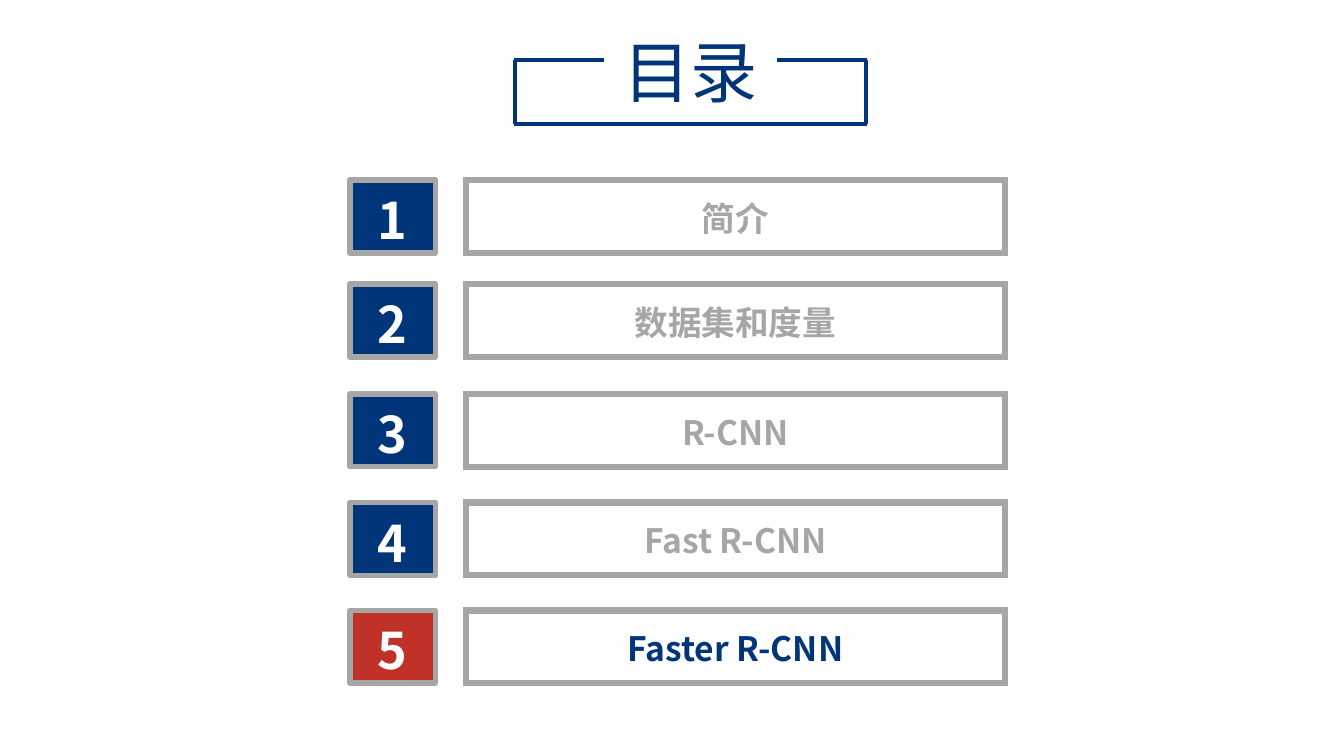
from pptx import Presentation
from pptx.dml.color import RGBColor
from pptx.enum.shapes import MSO_CONNECTOR, MSO_SHAPE
from pptx.enum.text import MSO_ANCHOR, PP_ALIGN
from pptx.oxml.ns import qn
from pptx.util import Pt
from lxml import etree

RECT = MSO_SHAPE.RECTANGLE
STRAIGHT = MSO_CONNECTOR.STRAIGHT
MIDDLE = MSO_ANCHOR.MIDDLE
CENTER = PP_ALIGN.CENTER

FONT = "Noto Sans CJK SC"
COLORS = {"navy": "003679", "red": "C03228", "gray": "A6A6A6", "white": "FFFFFF"}


def rgb(name):
    return RGBColor.from_string(COLORS[name])


def write(sp, text, size, color, bold=False, spacing=None):
    """Put one centred line of text into a shape."""
    tf = sp.text_frame
    tf.word_wrap = True
    tf.vertical_anchor = MIDDLE
    p = tf.paragraphs[0]
    p.alignment = CENTER
    p.line_spacing = spacing
    r = p.add_run()
    r.text = text
    r.font.size = Pt(size)
    r.font.bold = bold
    r.font.name = FONT
    r.font.color.rgb = rgb(color)
    etree.SubElement(r.font._element, qn("a:ea"), typeface=FONT)


class Agenda:
    """Draws on one slide; lengths are in points."""

    def __init__(self, slide):
        self.slide = slide
        self.shapes = slide.shapes

    def group(self):
        """Send the next elements to a new group."""
        self.shapes = self.slide.shapes.add_group_shape().shapes

    def ungroup(self):
        self.shapes = self.slide.shapes

    def box(self, x, y, w, h, weight, join, fill=None):
        sp = self.shapes.add_shape(RECT, Pt(x), Pt(y), Pt(w), Pt(h))
        sp.shadow.inherit = False
        if fill:
            sp.fill.solid()
            sp.fill.fore_color.rgb = rgb(fill)
        else:
            sp.fill.background()
        sp.line.color.rgb = rgb("gray")
        sp.line.width = Pt(weight)
        etree.SubElement(sp.line._get_or_add_ln(), qn(f"a:{join}"))
        return sp

    def label(self, x, y, w, h, text, **style):
        sp = self.shapes.add_textbox(Pt(x), Pt(y), Pt(w), Pt(h))
        write(sp, text, **style)

    def line(self, x1, y1, x2, y2):
        s = self.shapes.add_connector(STRAIGHT, Pt(x1), Pt(y1), Pt(x2), Pt(y2))
        s.line.color.rgb = rgb("navy")
        s.line.width = Pt(3)
        etree.SubElement(s._element.spPr, qn("a:effectLst"))


def main():
    prs = Presentation()
    prs.slide_width, prs.slide_height = Pt(960), Pt(540)
    agenda = Agenda(prs.slides.add_slide(prs.slide_layouts[6]))

    # Title in an open frame
    left, right, top, bottom, arm = 367.5, 619, 43, 88.7, 64
    agenda.group()
    agenda.label(420, 18, 147, 65.5, "目录", size=48, color="navy")
    agenda.line(right - arm, top, right, top)
    agenda.line(left, top, left + arm, top)
    agenda.line(left, bottom, right, bottom)
    for x in (left + 0.5, right - 0.5):
        agenda.line(x, top, x, bottom)

    # Numbered sections, the current one highlighted
    sections = [
        (128.8, "简介"),
        (203, "数据集和度量"),
        (281.4, "R-CNN"),
        (359, "Fast R-CNN"),
        (436, "Faster R-CNN"),
    ]
    current = 5
    for number, (y, name) in enumerate(sections, 1):
        active = number == current
        agenda.ungroup()
        badge = agenda.box(250, y, 61, 52, 4, "round", "red" if active else "navy")
        write(badge, str(number), size=36, color="white", bold=True, spacing=1.1)
        agenda.group()
        agenda.box(332.8, y, 385, 52, 4.5, "miter")
        agenda.label(332.8, y + 7.2, 385, 36.7, name, size=24, bold=True,
                     color="navy" if active else "gray", spacing=1.1)

    prs.save("out.pptx")


if __name__ == "__main__":
    main()
